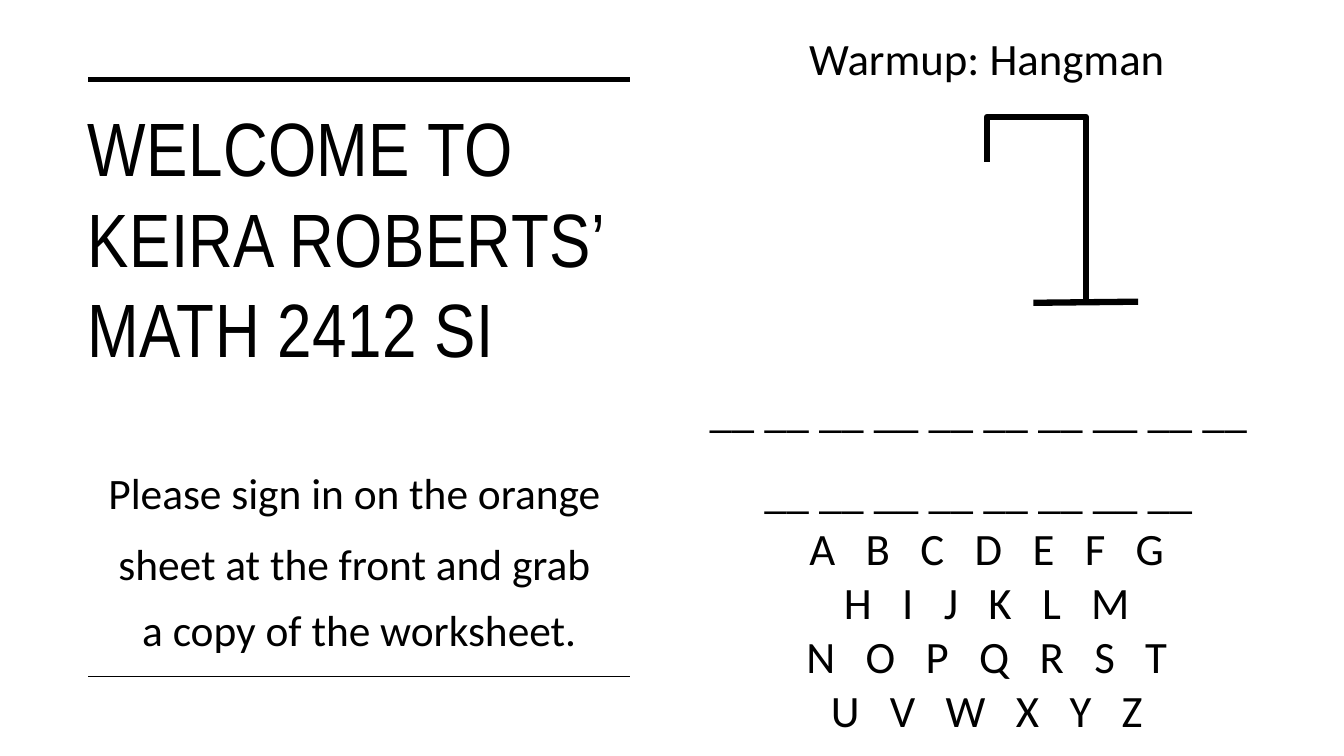
from dataclasses import dataclass

from lxml import etree
from pptx import Presentation
from pptx.dml.color import RGBColor
from pptx.enum.shapes import MSO_CONNECTOR
from pptx.enum.text import MSO_ANCHOR, MSO_AUTO_SIZE, PP_ALIGN
from pptx.oxml.ns import qn
from pptx.util import Pt

STRAIGHT, ELBOW = MSO_CONNECTOR.STRAIGHT, MSO_CONNECTOR.ELBOW
TOP, BOTTOM = MSO_ANCHOR.TOP, MSO_ANCHOR.BOTTOM
LEFT, CENTER = PP_ALIGN.LEFT, PP_ALIGN.CENTER
FIXED, GROW = MSO_AUTO_SIZE.NONE, MSO_AUTO_SIZE.SHAPE_TO_FIT_TEXT


@dataclass(frozen=True)
class Theme:
    """Colours, fonts, type sizes and line widths in points."""
    ink: RGBColor = RGBColor(0, 0, 0)
    paper: RGBColor = RGBColor(255, 255, 255)
    title_font: str = "Arial Narrow"
    body_font: str = "Calibri"
    title: float = 54
    notice: float = 31
    game: float = 32
    thick_rule: float = 3.5
    thin_rule: float = 1
    gallows: float = 4.5


THEME = Theme()


def style_text(tf, lines, size, font=THEME.body_font, align=CENTER, anchor=TOP,
               fit=GROW, spacings=None, before=0, tracking=0):
    """Fill a text frame with one paragraph per line and format it."""
    tf.text = "\n".join(lines)
    tf.word_wrap = True
    tf.auto_size = fit
    tf.vertical_anchor = anchor
    for p, spacing in zip(tf.paragraphs, spacings or [1.0] * len(lines)):
        p.alignment = align
        p.line_spacing = spacing
        p.space_before = Pt(before)
        for r in p.runs:
            r.font.size = Pt(size)
            r.font.name = font
            r.font.color.rgb = THEME.ink
            if tracking:
                r.font._element.set("spc", str(round(tracking * 100)))


def add_text(s, x, y, w, h, lines, size, **options):
    """Add a formatted text box."""
    sp = s.shapes.add_textbox(Pt(x), Pt(y), Pt(w), Pt(h))
    style_text(sp.text_frame, lines, size, **options)


def add_line(s, x1, y1, x2, y2, width, kind=STRAIGHT):
    """Add a plain connector without a shadow."""
    cxn = s.shapes.add_connector(kind, Pt(x1), Pt(y1), Pt(x2), Pt(y2))
    cxn.line.color.rgb = THEME.ink
    cxn.line.width = Pt(width)
    etree.SubElement(cxn._element.spPr, qn("a:effectLst"))
    return cxn


def add_welcome(s, x, y, w, h):
    """Place the title and sign-in notice between two rules."""
    title = s.shapes.title
    title.left, title.top = Pt(x - 7.6), Pt(y + 11.5)
    title.width, title.height = Pt(w + 25), Pt(304.6)
    style_text(title.text_frame, ["WELCOME TO \vKEIRA ROBERTS’\vMATH 2412 SI"],
               THEME.title, font=THEME.title_font, align=LEFT, fit=FIXED,
               tracking=0.3)
    add_text(s, x, y + h - 114.5, w, 103,
             ["Please sign in on the orange ", "sheet at the front and grab ",
              "a copy of the worksheet."],
             THEME.notice, anchor=BOTTOM, fit=FIXED,
             spacings=[1.1, 1.1, 1.0], before=10)
    add_line(s, x, y, x + w, y, THEME.thick_rule)
    add_line(s, x, y + h, x + w, y + h, THEME.thin_rule)


def add_gallows(s, x, y, w, h, rope):
    """Draw the gallows, with its beam along the top of the box."""
    drop = h - rope
    cx, cy = x + w / 2, y + rope + drop / 2
    frame = add_line(s, cx + drop / 2, cy - w / 2, cx - drop / 2, cy + w / 2,
                     THEME.gallows, ELBOW)
    spPr = frame._element.spPr
    spPr.find(qn("a:xfrm")).set("rot", "16200000")
    adjusts = spPr.find(qn("a:prstGeom")).find(qn("a:avLst"))
    etree.SubElement(adjusts, qn("a:gd"), name="adj1",
                     fmla=f"val {round(-100000 * rope / drop)}")
    add_line(s, x + w - 37.4, y + h - 0.4, x + w + 37.4, y + h - 1.2,
             THEME.gallows)


def add_hangman(s, x, y, w):
    """Place the warmup heading, gallows, word blanks and alphabet."""
    add_text(s, x, y, w, 46, ["Warmup: Hangman"], THEME.game)
    rows = ["ABCDEFG", "HIJKLM", "NOPQRST", "UVWXYZ"]
    add_text(s, x, y + 350, w, 163, [" ".join(row) for row in rows],
             THEME.game, tracking=7.23)
    add_text(s, x - 6, y + 251.3, w, 97,
             [" ".join(["__"] * count) for count in (10, 8)],
             THEME.game, spacings=[1.0, 1.5])
    add_gallows(s, x + w / 2, y + 64.8, 70.6, 133.2, rope=32.2)


def main():
    """Build and save the welcome slide."""
    prs = Presentation()
    prs.slide_width, prs.slide_height = Pt(960), Pt(540)
    s = prs.slides.add_slide(prs.slide_layouts[5])
    s.background.fill.solid()
    s.background.fill.fore_color.rgb = THEME.paper
    add_welcome(s, 63, 56.9, 387, 426.2)
    add_hangman(s, 499, 18.7, 412)
    prs.save("out.pptx")


if __name__ == "__main__":
    main()
